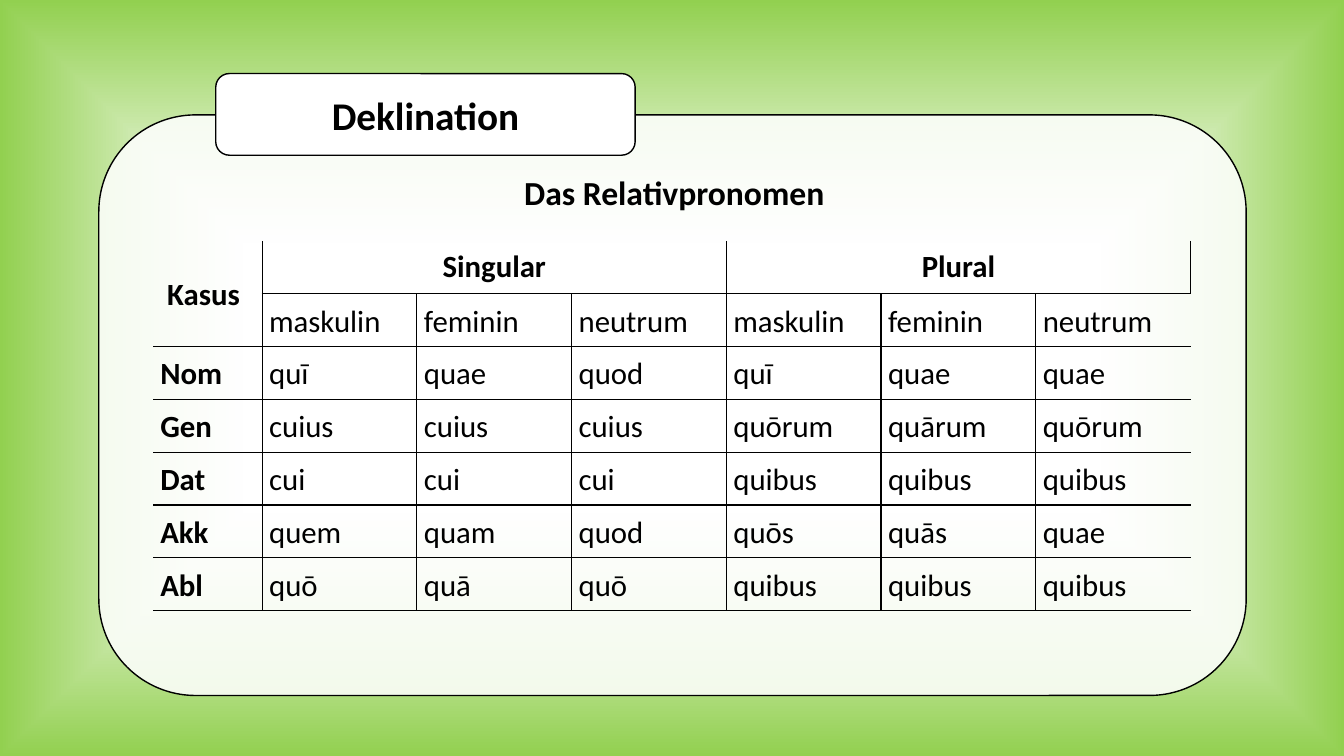
from dataclasses import dataclass

from lxml import etree
from pptx import Presentation
from pptx.dml.color import RGBColor
from pptx.enum.shapes import MSO_SHAPE
from pptx.enum.text import MSO_ANCHOR, MSO_AUTO_SIZE, PP_ALIGN
from pptx.oxml import parse_xml
from pptx.oxml.ns import nsdecls, qn
from pptx.shapes.autoshape import Shape
from pptx.slide import Slide
from pptx.table import Table, _Cell
from pptx.text.text import TextFrame
from pptx.util import Inches, Pt

ROUNDED = MSO_SHAPE.ROUNDED_RECTANGLE
MIDDLE = MSO_ANCHOR.MIDDLE
LEFT, CENTER = PP_ALIGN.LEFT, PP_ALIGN.CENTER
GROW = MSO_AUTO_SIZE.SHAPE_TO_FIT_TEXT


@dataclass(frozen=True)
class Theme:
    font: str = "Calibri"
    ink: str = "000000"
    paper: str = "FFFFFF"
    green: str = "92D050"
    blue: str = "5B9BD5"
    heading: int = 28
    subheading: int = 24
    body: int = 22
    line: int = 1
    panel_opacity: int = 85
    cell_spacing: float = 1.07


@dataclass(frozen=True)
class Area:
    left: float
    top: float
    width: float
    height: float

    def lengths(self) -> list[int]:
        return [Inches(n) for n in (self.left, self.top, self.width, self.height)]


THEME = Theme()
PANEL = Area(0.98, 1.14, 11.38, 5.76)
HEADING = Area(2.14, 0.73, 4.16, 0.81)
SUBHEADING = Area(5.1, 1.66, 3.21, 0.5)
GRID = Area(1.52, 2.39, 10.29, 3.67)
CASE_WIDTH = 1.08
CELL_INSET = 0.07

GENDERS = ["maskulin", "feminin", "neutrum"]
ROWS = [
    [" Kasus", "Singular", "", "", "Plural", "", ""],
    ["", *GENDERS, *GENDERS],
    ["Nom", "quī", "quae", "quod", "quī", "quae", "quae"],
    ["Gen", "cuius", "cuius", "cuius", "quōrum", "quārum", "quōrum"],
    ["Dat", "cui", "cui", "cui", "quibus", "quibus", "quibus"],
    ["Akk", "quem", "quam", "quod", "quōs", "quās", "quae"],
    ["Abl", "quō", "quā", "quō", "quibus", "quibus", "quibus"],
]
MERGES = [((0, 0), (1, 0)), ((0, 1), (0, 3)), ((0, 4), (0, 6))]


def write(frame: TextFrame, text: str, size: int, bold: bool = True,
          align: PP_ALIGN = LEFT, spacing: float | None = None) -> None:
    para = frame.paragraphs[0]
    para.alignment = align
    para.line_spacing = spacing
    span = para.add_run()
    span.text = text
    font_format = {"name": THEME.font, "size": Pt(size), "bold": bold}
    for name, value in font_format.items():
        setattr(span.font, name, value)
    span.font.color.rgb = RGBColor.from_string(THEME.ink)


def paint_background(page: Slide) -> None:
    """Fill the page with a gradient running from the centre to the edges."""
    stops = [(3, THEME.paper), (30, THEME.paper), (35, THEME.paper),
             (100, THEME.green), (100, THEME.blue)]
    stop_xml = "".join(
        f'<a:gs pos="{place * 1000}"><a:srgbClr val="{color}"/></a:gs>'
        for place, color in stops)
    gradient = parse_xml(
        f'<a:gradFill {nsdecls("a")} rotWithShape="1"><a:gsLst>{stop_xml}</a:gsLst>'
        '<a:path path="shape"><a:fillToRect l="50000" t="50000" r="50000" b="50000"/>'
        '</a:path></a:gradFill>')
    page.background.fill.solid()
    properties = page.element.find(".//" + qn("p:bgPr"))
    properties.replace(properties.find(qn("a:solidFill")), gradient)


def add_rounded_box(page: Slide, area: Area) -> Shape:
    box = page.shapes.add_shape(ROUNDED, *area.lengths())
    box.shadow.inherit = False
    box.fill.solid()
    box.fill.fore_color.rgb = RGBColor.from_string(THEME.paper)
    box.line.color.rgb = RGBColor.from_string(THEME.ink)
    box.line.width = Pt(THEME.line)
    return box


def set_opacity(box: Shape, percent: int) -> None:
    color = box.element.spPr.find(qn("a:solidFill")).find(qn("a:srgbClr"))
    etree.SubElement(color, qn("a:alpha"), val=str(percent * 1000))


def set_borders(cell: _Cell, visible: dict[str, bool]) -> None:
    """Draw or hide each side of a cell, keyed L, R, T and B in schema order."""
    properties = cell._tc.get_or_add_tcPr()
    for index, (side, shown) in enumerate(visible.items()):
        fill = (f'<a:solidFill><a:srgbClr val="{THEME.ink}"/></a:solidFill>'
                if shown else "<a:noFill/>")
        properties.insert(index, parse_xml(
            f'<a:ln{side} {nsdecls("a")} w="{Pt(THEME.line)}">{fill}</a:ln{side}>'))


def fill_cell(table: Table, row: int, column: int, text: str) -> None:
    cell = table.cell(row, column)
    inset = Inches(CELL_INSET)
    cell_format = {"vertical_anchor": MIDDLE, "margin_left": inset,
                   "margin_right": inset, "margin_top": 0, "margin_bottom": 0}
    for name, value in cell_format.items():
        setattr(cell, name, value)
    cell.fill.background()
    set_borders(cell, {"L": column > 0, "R": column < len(ROWS[0]) - 1,
                       "T": row > 0, "B": True})
    if text:
        is_number = row == 0 and column > 0
        write(cell.text_frame, text, THEME.body,
              bold=row == 0 or column == 0,
              align=CENTER if is_number else LEFT,
              spacing=None if is_number else THEME.cell_spacing)


def add_declension_table(page: Slide) -> None:
    row_count, column_count = len(ROWS), len(ROWS[0])
    table = page.shapes.add_table(row_count, column_count, *GRID.lengths()).table
    table.first_row = False
    table.horz_banding = False
    form_width = (GRID.width - CASE_WIDTH) / (column_count - 1)
    for index, column in enumerate(table.columns):
        column.width = Inches(form_width if index else CASE_WIDTH)
    for row in table.rows:
        row.height = Inches(GRID.height / row_count)
    for first, last in MERGES:
        table.cell(*first).merge(table.cell(*last))
    for row_index, texts in enumerate(ROWS):
        for column_index, text in enumerate(texts):
            fill_cell(table, row_index, column_index, text)


def main() -> None:
    deck = Presentation()
    deck.slide_width, deck.slide_height = Inches(13.33), Inches(7.5)
    page = deck.slides.add_slide(deck.slide_layouts[6])
    paint_background(page)
    set_opacity(add_rounded_box(page, PANEL), THEME.panel_opacity)

    heading = add_rounded_box(page, HEADING).text_frame
    heading.vertical_anchor = MIDDLE
    write(heading, "Deklination", THEME.heading, align=CENTER)

    add_declension_table(page)

    subheading = page.shapes.add_textbox(*SUBHEADING.lengths()).text_frame
    subheading.word_wrap = False
    subheading.auto_size = GROW
    write(subheading, "Das Relativpronomen", THEME.subheading)
    deck.save("out.pptx")


if __name__ == "__main__":
    main()
